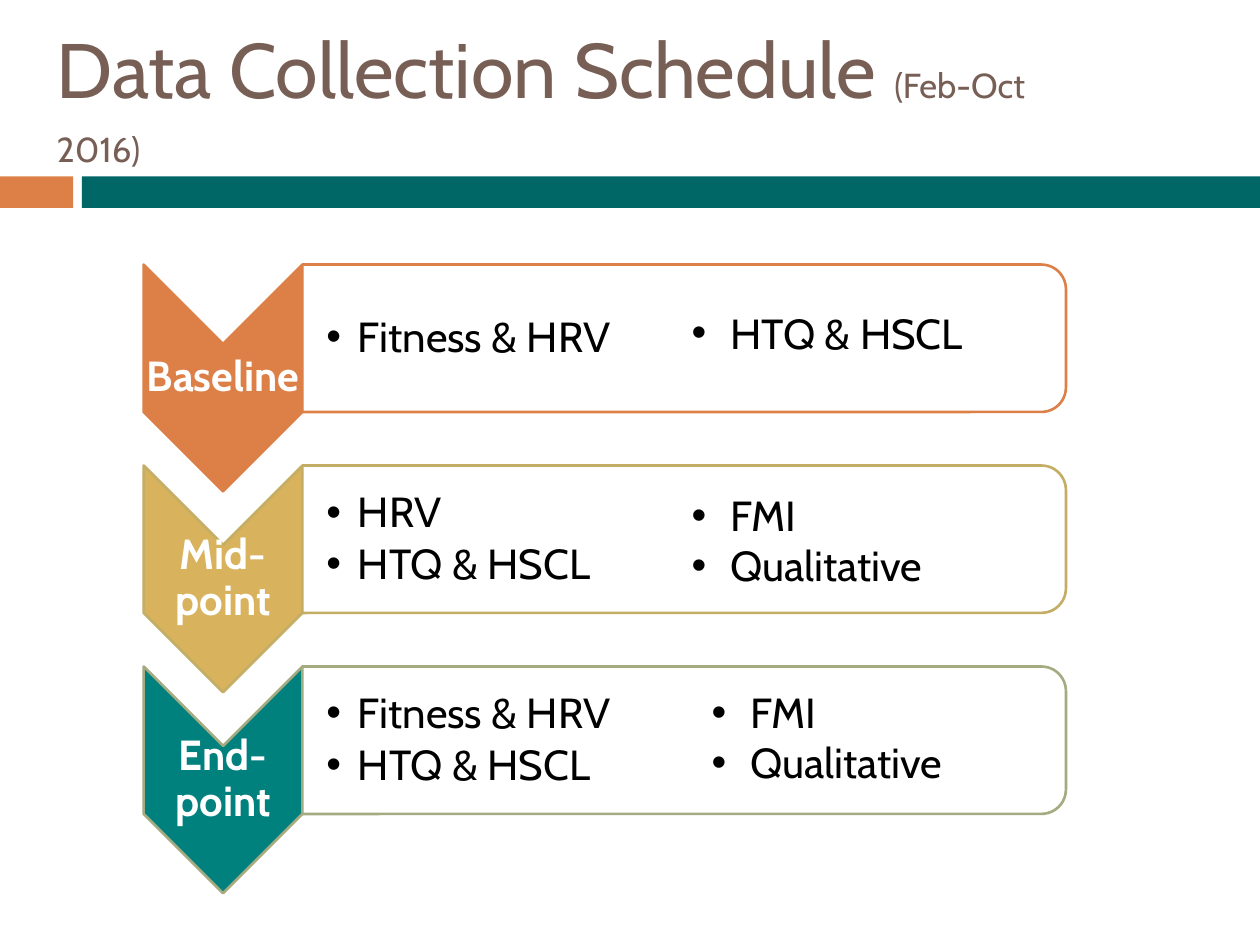
from dataclasses import dataclass

from lxml import etree
from pptx import Presentation
from pptx.dml.color import RGBColor
from pptx.enum.shapes import MSO_SHAPE
from pptx.enum.text import MSO_ANCHOR, MSO_AUTO_SIZE, PP_ALIGN
from pptx.oxml.ns import qn
from pptx.util import Inches, Pt

RECTANGLE = MSO_SHAPE.RECTANGLE
CHEVRON = MSO_SHAPE.CHEVRON
PANEL = MSO_SHAPE.ROUND_2_SAME_RECTANGLE
MIDDLE, TOP = MSO_ANCHOR.MIDDLE, MSO_ANCHOR.TOP
LEFT, CENTER = PP_ALIGN.LEFT, PP_ALIGN.CENTER
NO_FIT, GROW = MSO_AUTO_SIZE.NONE, MSO_AUTO_SIZE.SHAPE_TO_FIT_TEXT

FONT = "Cabin"
COLORS = {
    "orange": "DD8047", "band": "006666", "title": "775F55",
    "gold": "D8B25C", "gold_line": "C4AD64", "teal": "00817E",
    "sage_line": "A5AB81", "white": "FFFFFF", "black": "000000",
}
SLIDE_WIDTH, SLIDE_HEIGHT = 10, 7.5
GRID_TOP, ROW_PITCH = 2.1, 1.595
ARROW_LEFT, ARROW_WIDTH, ARROW_HEIGHT = 1.14, 1.26, 1.8
PANEL_LEFT, PANEL_WIDTH, PANEL_HEIGHT = ARROW_LEFT + ARROW_WIDTH, 6.06, 1.17


@dataclass(frozen=True)
class Area:
    left: float
    top: float
    width: float
    height: float

    def turned(self) -> "Area":
        shift = (self.width - self.height) / 2
        return Area(self.left + shift, self.top - shift, self.height, self.width)

    def lengths(self) -> list:
        return [Inches(side) for side in (self.left, self.top, self.width, self.height)]


@dataclass(frozen=True)
class Phase:
    label: str
    fill: str
    line: str
    measures: tuple
    extras: tuple
    extras_left: float
    extras_drop: float


@dataclass(frozen=True)
class TextStyle:
    color: str = "black"
    bold: bool = False
    align: int = LEFT
    anchor: int = MIDDLE
    insets: tuple = (0.02, 0.02, 0.02, 0.02)
    fit: int = NO_FIT
    hang: float = 0
    level: int = 0
    line_spacing: float = 0.9
    space_after: float = 0


LABEL = TextStyle(color="white", bold=True, align=CENTER, space_after=8.4)
MEASURES = TextStyle(insets=(0.19, 0.02, 0.02, 0.02), hang=0.25, level=1, space_after=3.6)
EXTRAS = TextStyle(anchor=TOP, insets=(0.1, 0.05, 0.1, 0.05), fit=GROW, hang=0.31, line_spacing=1)

PHASES = (
    Phase("Baseline", "orange", "orange", ("Fitness & HRV",), ("HTQ & HSCL",), 5.39, 0.29),
    Phase("Mid-point", "gold", "gold_line", ("HRV", "HTQ & HSCL"),
          ("FMI", "Qualitative"), 5.39, 0.14),
    Phase("End-point", "teal", "sage_line", ("Fitness & HRV", "HTQ & HSCL"),
          ("FMI", "Qualitative"), 5.55, 0.11),
)


def rgb(name: str) -> RGBColor:
    return RGBColor.from_string(COLORS[name])


def add_block(page, kind: int, area: Area, fill: str, line: str = "", quarter_turn: bool = False):
    place = area.turned() if quarter_turn else area
    shape = page.shapes.add_shape(kind, *place.lengths())
    shape.rotation = 90 if quarter_turn else 0
    shape.shadow.inherit = False
    shape.fill.solid()
    shape.fill.fore_color.rgb = rgb(fill)
    if line:
        shape.line.color.rgb = rgb(line)
        shape.line.width = Pt(1.5)
    else:
        shape.line.fill.background()
    return shape


def set_opacity(shape, percent: int) -> None:
    color = shape.fill._xPr.find(qn("a:solidFill"))[0]
    etree.SubElement(color, qn("a:alpha"), val=str(percent * 1000))


def add_span(para, text: str, size: float, color: str, bold: bool = False) -> None:
    span = para.add_run()
    span.text = text
    span.font.name = FONT
    span.font.size = Pt(size)
    span.font.bold = bold
    span.font.color.rgb = rgb(color)


def set_bullet(para, hang: float) -> None:
    properties = para._p.get_or_add_pPr()
    properties.set("marL", str(Inches(hang)))
    properties.set("indent", str(-Inches(hang)))
    etree.SubElement(properties, qn("a:buFont"), typeface="Arial")
    etree.SubElement(properties, qn("a:buChar"), char="•")


def add_text(page, area: Area, lines: tuple, style: TextStyle) -> None:
    frame = page.shapes.add_textbox(*area.lengths()).text_frame
    frame.word_wrap = True
    frame.auto_size = style.fit
    frame.vertical_anchor = style.anchor
    (frame.margin_left, frame.margin_top,
     frame.margin_right, frame.margin_bottom) = map(Inches, style.insets)
    for index, line in enumerate(lines):
        para = frame.add_paragraph() if index else frame.paragraphs[0]
        para.alignment = style.align
        para.level = style.level
        para.line_spacing = style.line_spacing
        para.space_after = Pt(style.space_after)
        if style.hang:
            set_bullet(para, style.hang)
        add_span(para, line, 24, style.color, style.bold)


def add_title(page) -> None:
    title = page.shapes.title
    title.left, title.top, title.width, title.height = Area(0.35, 0.23, 8.27, 1.08).lengths()
    frame = title.text_frame
    frame.word_wrap = True
    frame.auto_size = NO_FIT
    frame.vertical_anchor = MIDDLE
    para = frame.paragraphs[0]
    para.alignment = LEFT
    for text, size in (("Data Collection Schedule ", 44.1), ("(Feb-Oct 2016)", 19.8), (" ", 27.9)):
        add_span(para, text, size, "title")


def add_phase(page, row: int, phase: Phase) -> None:
    top = GRID_TOP + row * ROW_PITCH
    arrow = Area(ARROW_LEFT, top, ARROW_WIDTH, ARROW_HEIGHT)
    panel = Area(PANEL_LEFT, top, PANEL_WIDTH, PANEL_HEIGHT)
    add_block(page, CHEVRON, arrow, phase.fill, phase.line, True)
    add_text(page, Area(ARROW_LEFT, top + ARROW_WIDTH / 2, ARROW_WIDTH, 0.54),
             (phase.label,), LABEL)
    set_opacity(add_block(page, PANEL, panel, "white", phase.line, True), 90)
    add_text(page, Area(PANEL_LEFT, top + 0.06, 6, 1.06), phase.measures, MEASURES)
    extras_height = 0.1 + 0.4 * len(phase.extras)
    add_text(page, Area(phase.extras_left, top + phase.extras_drop, 2.63, extras_height),
             phase.extras, EXTRAS)


def main() -> None:
    deck = Presentation()
    deck.slide_width, deck.slide_height = Inches(SLIDE_WIDTH), Inches(SLIDE_HEIGHT)
    page = deck.slides.add_slide(deck.slide_layouts[5])
    add_block(page, RECTANGLE, Area(0, 1.4, 0.58, 0.25), "orange")
    add_block(page, RECTANGLE, Area(0.65, 1.4, SLIDE_WIDTH - 0.65, 0.25), "band")
    add_title(page)
    for row, phase in enumerate(PHASES):
        add_phase(page, row, phase)
    deck.save("out.pptx")


if __name__ == "__main__":
    main()
